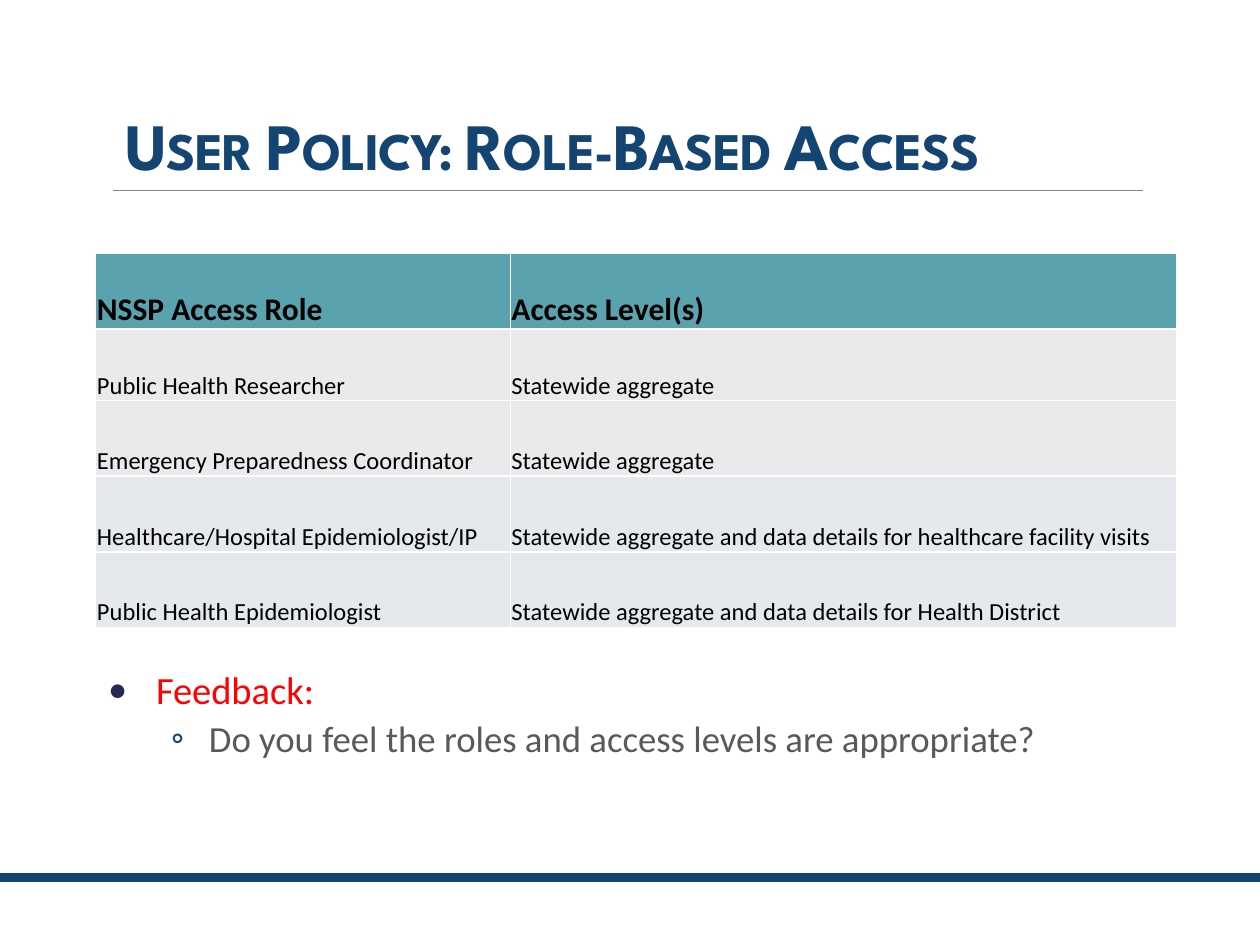
from lxml import etree
from pptx import Presentation
from pptx.dml.color import RGBColor
from pptx.enum.shapes import MSO_CONNECTOR as Link, MSO_SHAPE as Shape
from pptx.enum.text import MSO_ANCHOR as Anchor, PP_ALIGN as Align
from pptx.oxml import parse_xml
from pptx.oxml.ns import nsdecls, qn
from pptx.util import Inches, Pt


def color(code):
    return RGBColor.from_string(code)


def write(para, text, size, code, face="Calibri", bold=False):
    run = para.add_run()
    run.text = text
    run.font.size = Pt(size)
    run.font.name = face
    run.font.bold = bold
    run.font.color.rgb = color(code)
    return run


deck = Presentation()
deck.slide_width = Inches(10)
deck.slide_height = Inches(7.5)
slide = deck.slides.add_slide(deck.slide_layouts[6])
shapes = slide.shapes

band = shapes.add_shape(Shape.RECTANGLE, 0, Inches(6.93), Inches(10), Inches(0.07))
band.shadow.inherit = False
band.fill.solid()
band.fill.fore_color.rgb = color("144472")
band.line.fill.background()

rule = shapes.add_connector(Link.STRAIGHT, Inches(0.9), Inches(1.51), Inches(9.07), Inches(1.51))
rule.line.color.rgb = color("808080")
rule.line.width = Pt(0.5)
etree.SubElement(rule._element.spPr, qn("a:effectLst"))

title = shapes.add_textbox(Inches(0.9), Inches(0.31), Inches(8.3), Inches(1.2))
frame = title.text_frame
frame.word_wrap = True
frame.vertical_anchor = Anchor.BOTTOM
para = frame.paragraphs[0]
para.line_spacing = 0.85
run = write(para, "User Policy: Role-Based Access", 37.8, "144472", "League Spartan", True)
props = run.font._element
props.set("spc", "-50")
props.set("cap", "small")

rows = [
    ("NSSP Access Role", "Access Level(s)", "5AA2AE", 0.6),
    ("Public Health Researcher", "Statewide aggregate", "EBE9EC", 0.57),
    ("Emergency Preparedness Coordinator", "Statewide aggregate", "EBE9EC", 0.6),
    ("Healthcare/Hospital Epidemiologist/IP",
     "Statewide aggregate and data details for healthcare facility visits", "E5E9EE", 0.6),
    ("Public Health Epidemiologist",
     "Statewide aggregate and data details for Health District", "E5E9EE", 0.6),
]
table = shapes.add_table(len(rows), 2, Inches(0.76), Inches(2.01), Inches(8.58), Inches(2.97)).table
for col, width in zip(table.columns, (3.29, 5.29)):
    col.width = Inches(width)
for i, (role, level, fill, height) in enumerate(rows):
    table.rows[i].height = Inches(height)
    for j, text in enumerate((role, level)):
        cell = table.cell(i, j)
        cell.vertical_anchor = Anchor.BOTTOM
        cell.margin_left = cell.margin_right = cell.margin_top = Inches(0.01)
        cell.margin_bottom = 0
        for side in ("lnL", "lnR", "lnT", "lnB"):
            cell._tc.get_or_add_tcPr().append(parse_xml(
                f'<a:{side} {nsdecls("a")} w="12700"><a:solidFill>'
                f'<a:srgbClr val="FFFFFF"/></a:solidFill></a:{side}>'))
        cell.fill.solid()
        cell.fill.fore_color.rgb = color(fill)
        write(cell.text_frame.paragraphs[0], text, 14 if i else 18, "000000", bold=i == 0)

box = shapes.add_shape(Shape.RECTANGLE, Inches(0.76), Inches(5.24), Inches(8.58), Inches(0.85))
box.shadow.inherit = False
box.fill.solid()
box.fill.fore_color.rgb = color("FFFFFF")
box.line.fill.background()
frame = box.text_frame
frame.word_wrap = True
frame.vertical_anchor = Anchor.TOP
points = [
    ("Feedback:", 22, "FF0000", "•", "242852", 0.38, -0.38, 0, 0),
    ("Do you feel the roles and access levels are appropriate?",
     21, "595959", "◦", "144472", 0.8, -0.3, 2, 4),
]
for i, (text, size, code, mark, tint, left, hang, above, below) in enumerate(points):
    para = frame.add_paragraph() if i else frame.paragraphs[0]
    para.level = i
    para.alignment = Align.LEFT
    props = para._p.get_or_add_pPr()
    props.set("marL", str(Inches(left)))
    props.set("indent", str(Inches(hang)))
    hue = etree.SubElement(props, qn("a:buClr"))
    etree.SubElement(hue, qn("a:srgbClr"), val=tint)
    etree.SubElement(props, qn("a:buFont"), typeface="Calibri")
    etree.SubElement(props, qn("a:buChar"), char=mark)
    para.space_before = Pt(above)
    para.space_after = Pt(below)
    write(para, text, size, code)

deck.save("out.pptx")
